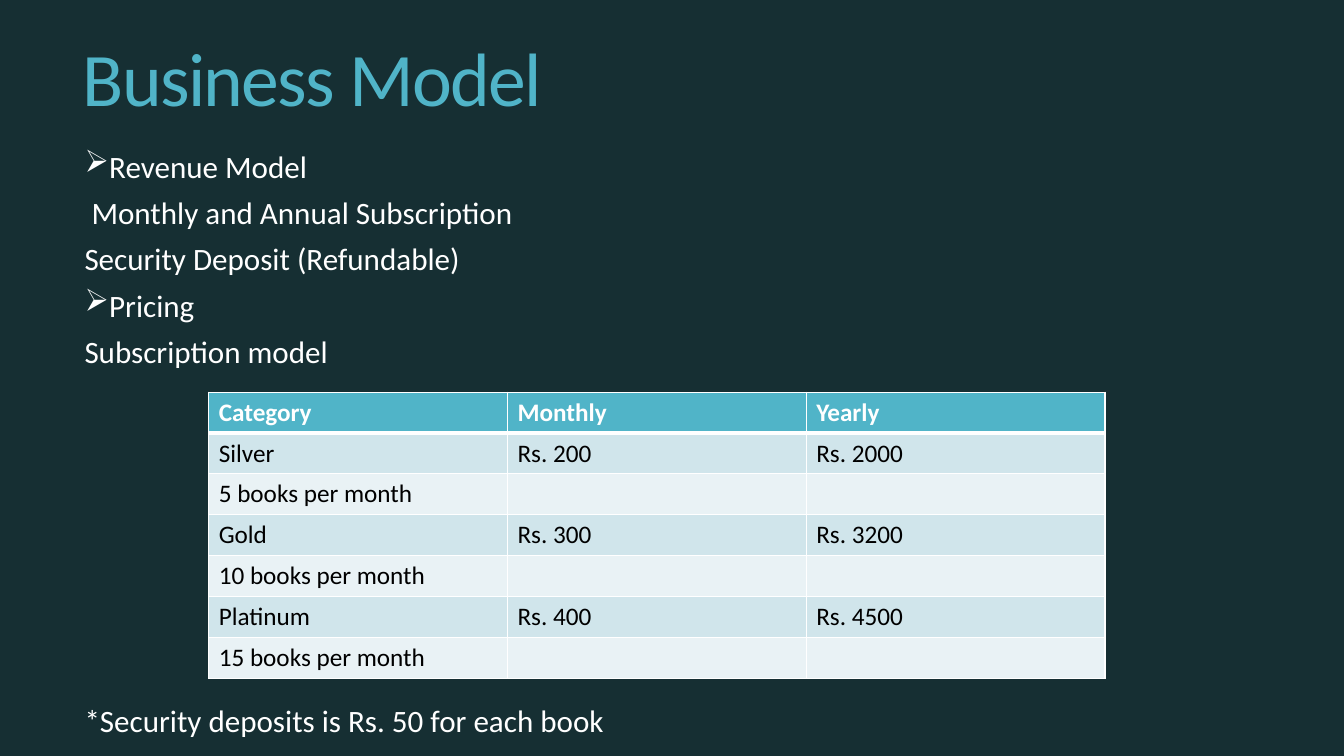
import dataclasses

import pptx
import pptx.dml.color
import pptx.enum.text
import pptx.oxml
import pptx.oxml.ns
import pptx.table
import pptx.text.text
import pptx.util
from pptx.util import Inches

FONT = "Calibri"
BACKGROUND = "162F33"
ACCENT = "50B4C8"
WHITE = "FFFFFF"
BLACK = "000000"
BANDS = ("D0E5EB", "E9F2F5")


@dataclasses.dataclass(frozen=True)
class BodyLine:
    text: str
    bulleted: bool = False
    space_before: float = 13


@dataclasses.dataclass(frozen=True)
class Plan:
    category: str
    monthly: str
    yearly: str
    allowance: str


BODY_LINES = (
    BodyLine("Revenue Model", bulleted=True),
    BodyLine(" Monthly and Annual Subscription"),
    BodyLine("Security Deposit (Refundable)"),
    BodyLine("Pricing", bulleted=True),
    BodyLine("Subscription model"),
    # The footnote sits below the pricing table
    BodyLine("*Security deposits is Rs. 50 for each book", space_before=244),
)
PLANS = (
    Plan("Silver", "Rs. 200", "Rs. 2000", "5 books per month"),
    Plan("Gold", "Rs. 300", "Rs. 3200", "10 books per month"),
    Plan("Platinum", "Rs. 400", "Rs. 4500", "15 books per month"),
)


def rgb(color: str) -> pptx.dml.color.RGBColor:
    return pptx.dml.color.RGBColor.from_string(color)


def style(paragraph: pptx.text.text._Paragraph, size: float, color: str, bold: bool = False) -> None:
    font = paragraph.font
    font.name, font.size, font.bold = FONT, pptx.util.Pt(size), bold
    font.color.rgb = rgb(color)


def add_bullet(paragraph: pptx.text.text._Paragraph) -> None:
    properties = paragraph._p.get_or_add_pPr()
    properties.set("marL", str(Inches(0.1)))
    properties.set("indent", str(-Inches(0.1)))
    bullet = pptx.oxml.parse_xml(f'<a:buChar {pptx.oxml.ns.nsdecls("a")} char="➢"/>')
    properties.insert_element_before(bullet, "a:tabLst", "a:defRPr", "a:extLst")


def write_body(frame: pptx.text.text.TextFrame, lines: tuple[BodyLine, ...]) -> None:
    frame.word_wrap = True
    for index, line in enumerate(lines):
        paragraph = frame.add_paragraph() if index else frame.paragraphs[0]
        paragraph.text = line.text
        paragraph.line_spacing = 0.75
        paragraph.space_before = pptx.util.Pt(line.space_before)
        style(paragraph, 22.2, WHITE)
        if line.bulleted:
            add_bullet(paragraph)


def set_borders(cell: pptx.table._Cell, top: float, bottom: float) -> None:
    properties = cell._tc.get_or_add_tcPr()
    widths = {"lnL": 1, "lnR": 1, "lnT": top, "lnB": bottom}
    for position, (edge, width) in enumerate(widths.items()):
        border = pptx.oxml.parse_xml(
            f'<a:{edge} {pptx.oxml.ns.nsdecls("a")} w="{pptx.util.Pt(width)}">'
            f'<a:solidFill><a:srgbClr val="{WHITE}"/></a:solidFill></a:{edge}>'
        )
        properties.insert(position, border)


def write_cell(cell: pptx.table._Cell, text: str, row: int) -> None:
    is_header = row == 0
    cell.text = text
    style(cell.text_frame.paragraphs[0], 18, WHITE if is_header else BLACK, is_header)
    cell.fill.solid()
    cell.fill.fore_color.rgb = rgb(ACCENT if is_header else BANDS[(row - 1) % 2])
    set_borders(cell, top=3 if row == 1 else 1, bottom=3 if is_header else 1)


def main() -> None:
    presentation = pptx.Presentation()
    presentation.slide_width = Inches(13.33)
    presentation.slide_height = Inches(7.5)
    slide = presentation.slides.add_slide(presentation.slide_layouts[5])
    slide.background.fill.solid()
    slide.background.fill.fore_color.rgb = rgb(BACKGROUND)

    # Title
    title = slide.shapes.title
    title.left, title.top = Inches(0.72), Inches(0.15)
    title.width, title.height = Inches(11.78), Inches(1.36)
    title.text_frame.text = "Business Model"
    title.text_frame.vertical_anchor = pptx.enum.text.MSO_ANCHOR.MIDDLE
    heading = title.text_frame.paragraphs[0]
    heading.alignment = pptx.enum.text.PP_ALIGN.LEFT
    heading.line_spacing = 0.85
    style(heading, 54, ACCENT)
    heading.runs[0].font._element.set("spc", "-120")

    # Revenue model, pricing and footnote
    body = slide.shapes.add_textbox(Inches(0.74), Inches(1.5), Inches(11.76), Inches(6))
    write_body(body.text_frame, BODY_LINES)

    # Pricing table
    rows = [("Category", "Monthly", "Yearly")]
    for plan in PLANS:
        rows.append((plan.category, plan.monthly, plan.yearly))
        rows.append((plan.allowance, "", ""))
    pricing = slide.shapes.add_table(
        len(rows), len(rows[0]), Inches(2.07), Inches(3.89), Inches(8.89), Inches(2.84)
    ).table
    for row, texts in enumerate(rows):
        for column, text in enumerate(texts):
            write_cell(pricing.cell(row, column), text, row)

    presentation.save("out.pptx")


if __name__ == "__main__":
    main()
